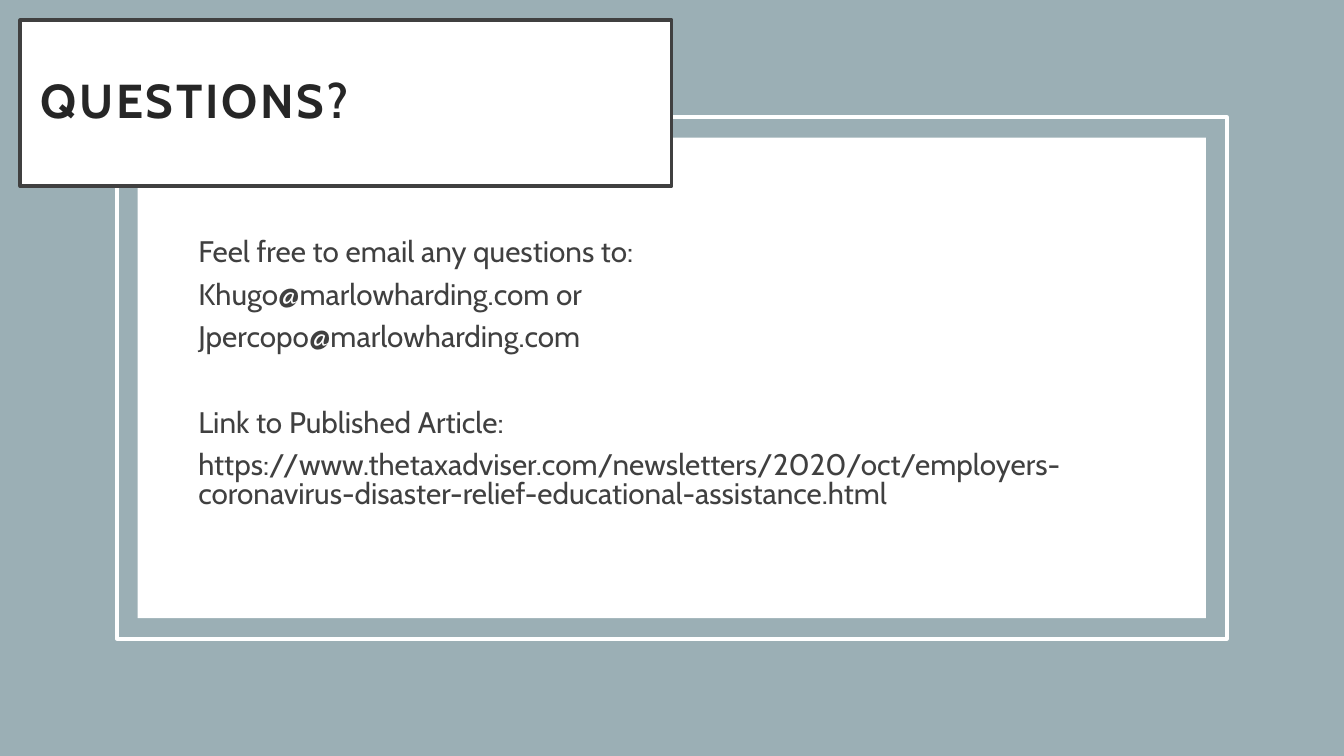
from pptx import Presentation
from pptx import util as u
from pptx.dml.color import RGBColor
from pptx.enum import shapes, text

FONT = "Cabin"
WHITE, TEAL, GREY, INK = "FFFFFF", "9BAFB5", "404040", "262626"
WIDE, HIGH = 33.87, 19.05
LINES = [
    ("Feel free to email any questions to:", 0),
    ("Khugo@marlowharding.com or", 10),
    ("Jpercopo@marlowharding.com", 10),
    ("Link to Published Article:", 40.7),
    ("https://www.thetaxadviser.com/newsletters/2020/oct/"
     "employers-coronavirus-disaster-relief-educational-assistance.html", 10),
]


def color(code):
    """Turn a hex string into a colour."""
    return RGBColor.from_string(code)


def panel(slide, box, fill=None, line=None):
    """Add a rectangle with an optional fill and outline."""
    shape = slide.shapes.add_shape(shapes.MSO_SHAPE.RECTANGLE, *map(u.Cm, box))
    shape.shadow.inherit = False
    if fill:
        shape.fill.solid()
        shape.fill.fore_color.rgb = color(fill)
    else:
        shape.fill.background()
    if line:
        shape.line.color.rgb = color(line)
        shape.line.width = u.Pt(2.5)
    else:
        shape.line.fill.background()
    return shape


def style(para, size, code, pitch, bold=False):
    """Set the font, alignment and line pitch of a paragraph."""
    para.alignment = text.PP_ALIGN.LEFT
    para.line_spacing = pitch
    para.font.name = FONT
    para.font.size = u.Pt(size)
    para.font.bold = bold
    para.font.color.rgb = color(code)


def title(slide, box, words):
    """Add the framed heading with wide letter spacing."""
    frame = panel(slide, box, WHITE, GREY).text_frame
    frame.word_wrap = True
    frame.vertical_anchor = text.MSO_ANCHOR.MIDDLE
    frame.margin_left = frame.margin_right = u.Cm(0.51)
    frame.margin_top = frame.margin_bottom = u.Cm(0.51)
    para = frame.paragraphs[0]
    run = para.add_run()
    run.text = words
    run.font._element.set("spc", "200")
    style(para, 34, INK, 0.9, True)


def body(slide, box, lines):
    """Add the contact text, one paragraph for each line and gap."""
    frame = slide.shapes.add_textbox(*map(u.Cm, box)).text_frame
    frame.word_wrap = True
    for i, (words, gap) in enumerate(lines):
        para = frame.add_paragraph() if i else frame.paragraphs[0]
        para.text = words
        style(para, 21.2, GREY, 0.8)
        if gap:
            para.space_before = u.Pt(gap)


def main():
    """Build the slide and save it."""
    deck = Presentation()
    deck.slide_width, deck.slide_height = u.Cm(WIDE), u.Cm(HIGH)
    slide = deck.slides.add_slide(deck.slide_layouts[6])
    panel(slide, (0, 0, WIDE, HIGH), TEAL)
    panel(slide, (3.47, 3.47, 26.92, 12.11), WHITE)
    panel(slide, (2.95, 2.95, 27.97, 13.15), line=WHITE)
    title(slide, (0.51, 0.51, 16.42, 4.18), "QUESTIONS?")
    body(slide, (4.75, 5.92, 24.38, 8.46), LINES)
    deck.save("out.pptx")


if __name__ == "__main__":
    main()
